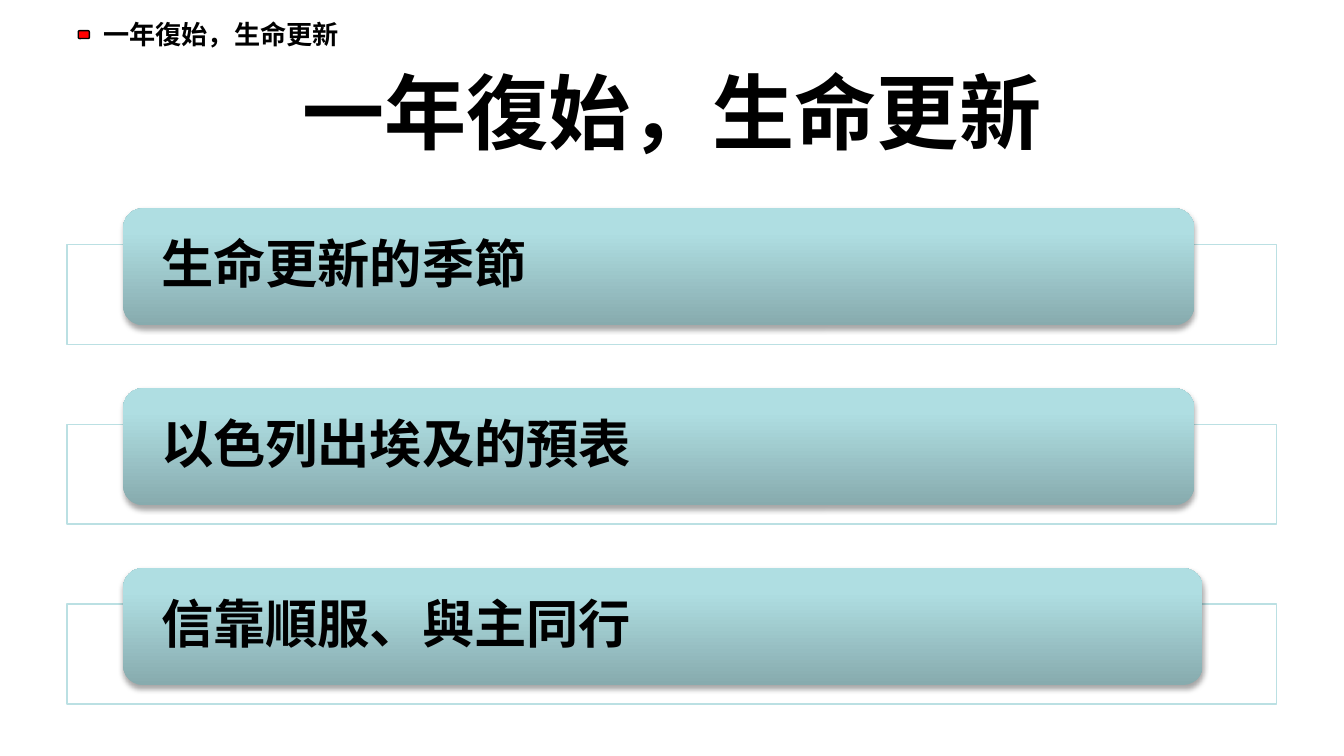
from copy import deepcopy

from lxml import etree
from pptx import Presentation
from pptx.dml.color import RGBColor
from pptx.enum.shapes import MSO_SHAPE as Shape
from pptx.enum.text import MSO_ANCHOR as Anchor, MSO_AUTO_SIZE as AutoSize, PP_ALIGN as Align
from pptx.oxml import parse_xml
from pptx.oxml.ns import nsdecls, qn
from pptx.util import Cm, Pt

BLACK = RGBColor(0x00, 0x00, 0x00)
WHITE = RGBColor(0xFF, 0xFF, 0xFF)
RED = RGBColor(0xFF, 0x00, 0x00)
PALE_TEAL = RGBColor(0xBB, 0xE0, 0xE3)
BAR_STOPS = [
    (0, RGBColor(0x87, 0xAB, 0xAE)),
    (0.8, RGBColor(0xAF, 0xDE, 0xE2)),
    (1, RGBColor(0xAF, 0xE0, 0xE4)),
]
FONT = "Calibri"
TOPIC = "一年復始，生命更新"
# Each point with the width of its bar in cm
POINTS = [("生命更新的季節", 20.24), ("以色列出埃及的預表", 20.24), ("信靠順服、與主同行", 20.4)]


def write(frame, text, size, align=Align.LEFT):
    frame.text = text
    paragraph = frame.paragraphs[0]
    paragraph.alignment = align
    font = paragraph.font
    font.name, font.size, font.bold = FONT, Pt(size), True
    font.color.rgb = BLACK
    return paragraph


def add_outlined(slide, kind, box, fill, line):
    outlined = slide.shapes.add_shape(kind, *map(Cm, box))
    outlined.shadow.inherit = False
    outlined.fill.solid()
    outlined.fill.fore_color.rgb = fill
    outlined.line.color.rgb = line
    outlined.line.width = Pt(0.75)
    return outlined


def shade_bar(bar):
    """Give a bar its three-stop gradient and soft shadow."""
    bar.fill.gradient()
    bar.fill.gradient_angle = 90
    properties = bar._element.spPr
    stop_list = properties.find(qn("a:gradFill")).find(qn("a:gsLst"))
    stop_list.append(deepcopy(stop_list[-1]))
    for stop, (position, color) in zip(bar.fill.gradient_stops, BAR_STOPS):
        stop.position = position
        stop.color.rgb = color
    bar.line.fill.background()

    bar.shadow.inherit = False
    properties.find(qn("a:effectLst")).append(parse_xml(
        f'<a:outerShdw {nsdecls("a")} blurRad="{Pt(3.1)}" dist="{Pt(1.8)}" dir="5400000" '
        'rotWithShape="0"><a:srgbClr val="000000"><a:alpha val="35000"/></a:srgbClr></a:outerShdw>'))


def add_header(slide, left, top, width, height):
    header = slide.shapes.add_textbox(Cm(left), Cm(top), Cm(width), Cm(height))
    header.text_frame.word_wrap = True
    write(header.text_frame, TOPIC, 14)
    # Red marker before the text
    add_outlined(slide, Shape.ROUNDED_RECTANGLE, (left - 0.22, top + 0.35, 0.21, 0.15), RED, BLACK)


def place_title(slide, left, top, width, height):
    title = slide.shapes.title
    title.left, title.top, title.width, title.height = map(Cm, (left, top, width, height))
    title.text_frame.vertical_anchor = Anchor.MIDDLE
    title.text_frame.auto_size = AutoSize.NONE
    write(title.text_frame, TOPIC, 44, Align.CENTER)


def add_point(slide, left, top, width, height, text, bar_width):
    # Panel behind the bar, slightly see-through
    panel = add_outlined(slide, Shape.RECTANGLE, (left, top, width, height), WHITE, PALE_TEAL)
    panel_color = panel._element.spPr.find(qn("a:solidFill"))[0]
    etree.SubElement(panel_color, qn("a:alpha"), val="90000")

    # Bar rising above the panel
    bar = slide.shapes.add_shape(
        Shape.ROUNDED_RECTANGLE, Cm(left + 1.06), Cm(top - 0.68), Cm(bar_width), Cm(2.21))
    shade_bar(bar)
    frame = bar.text_frame
    frame.word_wrap = True
    frame.vertical_anchor = Anchor.MIDDLE
    frame.margin_left = frame.margin_right = Cm(0.61)
    frame.margin_top = frame.margin_bottom = 0
    write(frame, text, 28).line_spacing = 0.9


def add_point_list(slide, left, top, width, panel_height, pitch):
    for row, (text, bar_width) in enumerate(POINTS):
        add_point(slide, left, top + row * pitch, width, panel_height, text, bar_width)


def main():
    deck = Presentation()
    deck.slide_width, deck.slide_height = Cm(25.4), Cm(14.29)
    slide = deck.slides.add_slide(deck.slide_layouts[5])
    add_header(slide, 1.7, 0.23, 10.36, 0.86)
    place_title(slide, 1.27, 0.89, 22.86, 2.39)
    add_point_list(slide, 1.27, 4.62, 22.86, 1.89, 3.4)
    deck.save("out.pptx")


if __name__ == "__main__":
    main()
